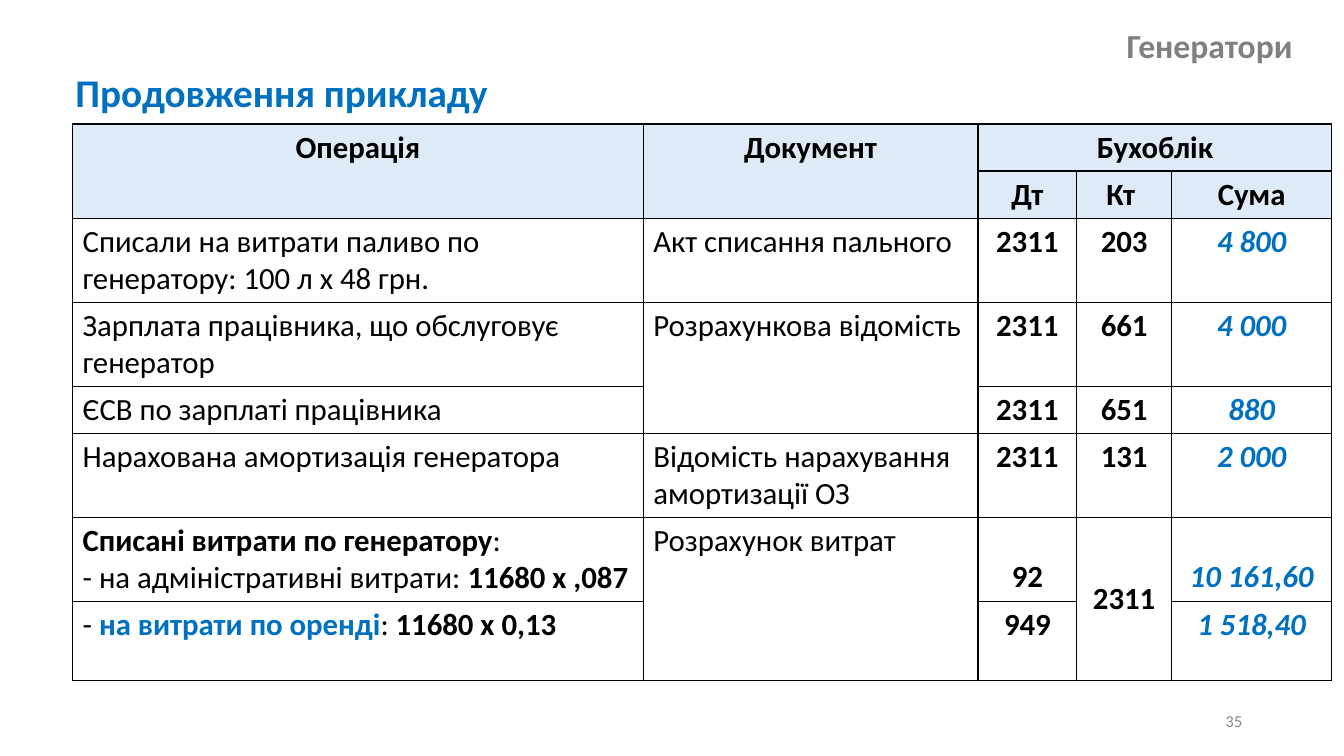
import pptx
import pptx.util
import pptx.dml.color
import pptx.enum.text
import pptx.oxml
import pptx.oxml.ns

Inches = pptx.util.Inches
Pt = pptx.util.Pt
Align = pptx.enum.text.PP_ALIGN
Anchor = pptx.enum.text.MSO_ANCHOR

COLORS = {"text": "000000", "accent": "0070C0", "title": "808080",
          "number": "8C8C8C", "header": "DEEBF7", "border": "000000"}

# Text styles: colour, bold, italic
STYLES = {"plain": ("text", False, False), "bold": ("text", True, False),
          "accent": ("accent", True, False), "sum": ("accent", True, True),
          "title": ("title", True, False), "number": ("number", False, False)}

COLUMN_WIDTHS = [5.66, 3.32, 0.98, 0.94, 1.59]
ROW_HEIGHTS = [0.45, 0.45, 0.81, 0.81, 0.45, 0.81, 0.81, 0.79]
HEADER_ROWS = 2
MERGES = [((0, 0), (1, 0)), ((0, 1), (1, 1)), ((0, 2), (0, 4)),
          ((3, 1), (4, 1)), ((6, 1), (7, 1)), ((6, 3), (7, 3))]

# Plain strings take the style of their column; lists hold paragraphs of runs
COLUMN_STYLES = ["plain", "plain", "bold", "bold", "sum"]
ROWS = [
    ["Операція", "Документ", "Бухоблік", None, None],
    [None, None, "Дт", "Кт ", "Сума"],
    ["Списали на витрати паливо по генератору: 100 л х 48 грн.",
     "Акт списання пального", "2311", "203", "4 800"],
    ["Зарплата працівника, що обслуговує генератор",
     "Розрахункова відомість", "2311", "661", "4 000"],
    ["ЄСВ по зарплаті працівника", None, "2311", "651", "880"],
    ["Нарахована амортизація генератора",
     "Відомість нарахування амортизації ОЗ", "2311", "131", "2 000"],
    [[[("Списані витрати по генератору", "bold"), (":", "plain")],
      [("- на адміністративні витрати: ", "plain"), ("11680 х ,087", "bold")]],
     "Розрахунок витрат", "92", "2311", "10 161,60"],
    [[[("- ", "plain"), ("на витрати по оренді", "accent"),
       (": ", "plain"), ("11680 х 0,13", "bold")]],
     None, "949", None, "1 518,40"],
]
CELL_ANCHORS = {(6, 2): Anchor.BOTTOM, (6, 4): Anchor.BOTTOM,
                (6, 3): Anchor.MIDDLE}


class SlideBuilder:
    font = "Calibri"

    def __init__(self, deck):
        self.slide = deck.slides.add_slide(deck.slide_layouts[5])

    def fill_text(self, frame, paragraphs, size, align, spacing=None):
        for index, runs in enumerate(paragraphs):
            para = frame.paragraphs[0] if index == 0 else frame.add_paragraph()
            para.alignment = align
            if spacing:
                para.line_spacing = spacing
            for text, style in runs:
                color, bold, italic = STYLES[style]
                span = para.add_run()
                span.text = text
                span.font.name = self.font
                span.font.size = Pt(size)
                span.font.bold = bold
                span.font.italic = italic
                span.font.color.rgb = pptx.dml.color.RGBColor.from_string(
                    COLORS[color])

    def title(self, text, left, top, width, height):
        box = self.slide.shapes.title
        box.left, box.top = Inches(left), Inches(top)
        box.width, box.height = Inches(width), Inches(height)
        box.text_frame.auto_size = pptx.enum.text.MSO_AUTO_SIZE.NONE
        box.text_frame.vertical_anchor = Anchor.MIDDLE
        self.fill_text(box.text_frame, [[(text, "title")]], 24, Align.RIGHT, 0.9)

    def text(self, text, left, top, width, height, size, style,
             align=Align.LEFT, anchor=Anchor.TOP, spacing=None):
        box = self.slide.shapes.add_textbox(
            Inches(left), Inches(top), Inches(width), Inches(height))
        box.text_frame.word_wrap = True
        box.text_frame.vertical_anchor = anchor
        self.fill_text(box.text_frame, [[(text, style)]], size, align, spacing)

    def borders(self, cell):
        properties = cell._tc.get_or_add_tcPr()
        for side in ("lnL", "lnR", "lnT", "lnB"):
            properties.append(pptx.oxml.parse_xml(
                f'<a:{side} {pptx.oxml.ns.nsdecls("a")} w="12700"><a:solidFill>'
                f'<a:srgbClr val="{COLORS["border"]}"/></a:solidFill></a:{side}>'))

    def table(self, left, top):
        table = self.slide.shapes.add_table(
            len(ROW_HEIGHTS), len(COLUMN_WIDTHS), Inches(left), Inches(top),
            Inches(sum(COLUMN_WIDTHS)), Inches(sum(ROW_HEIGHTS))).table
        table.first_row = table.horz_banding = False
        for column, width in zip(table.columns, COLUMN_WIDTHS):
            column.width = Inches(width)
        for row, height in zip(table.rows, ROW_HEIGHTS):
            row.height = Inches(height)
        for first, last in MERGES:
            table.cell(*first).merge(table.cell(*last))

        for row, contents in enumerate(ROWS):
            header = row < HEADER_ROWS
            for column, content in enumerate(contents):
                cell = table.cell(row, column)
                self.borders(cell)
                if header:
                    cell.fill.solid()
                    cell.fill.fore_color.rgb = pptx.dml.color.RGBColor.from_string(
                        COLORS["header"])
                else:
                    cell.fill.background()
                if content is None:
                    continue
                if isinstance(content, str):
                    style = "bold" if header else COLUMN_STYLES[column]
                    content = [[(content, style)]]
                cell.vertical_anchor = CELL_ANCHORS.get((row, column), Anchor.TOP)
                align = Align.CENTER if header or column > 1 else Align.LEFT
                self.fill_text(cell.text_frame, content, 22, align)


def main():
    deck = pptx.Presentation()
    deck.slide_width, deck.slide_height = Inches(13.33), Inches(7.5)
    page = SlideBuilder(deck)

    # Headings
    page.title("Генератори", 9.68, 0.24, 3.24, 0.47)
    page.text("Продовження прикладу", 0.65, 0.68, 11.59, 0.55, 28, "accent",
              spacing=0.9)

    # Ledger entries
    page.table(0.72, 1.23)

    # Slide number
    page.text("35", 9.42, 6.95, 3, 0.4, 12, "number", Align.RIGHT, Anchor.MIDDLE)

    deck.save("out.pptx")


if __name__ == "__main__":
    main()
